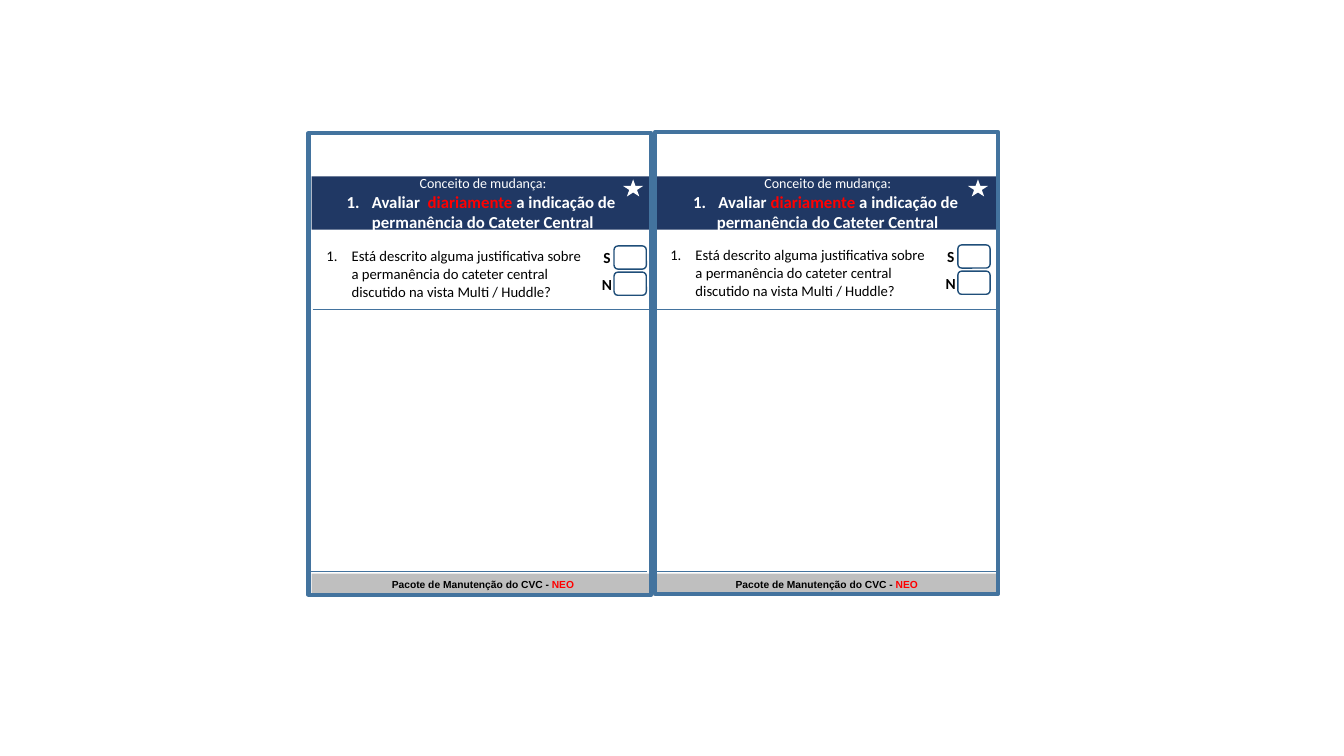
from dataclasses import dataclass

from lxml.etree import SubElement
from pptx import Presentation
from pptx.dml.color import RGBColor
from pptx.enum.shapes import MSO_CONNECTOR, MSO_SHAPE
from pptx.enum.text import MSO_ANCHOR, PP_ALIGN
from pptx.oxml.ns import qn
from pptx.shapes.autoshape import Shape
from pptx.shapes.shapetree import SlideShapes
from pptx.util import Inches, Pt

NAVY = RGBColor(0x20, 0x38, 0x64)
STEEL = RGBColor(0x43, 0x73, 0x9E)
EDGE = RGBColor(0x1F, 0x4E, 0x79)
GREY = RGBColor(0xBF, 0xBF, 0xBF)
WHITE = RGBColor(0xFF, 0xFF, 0xFF)
BLACK = RGBColor(0, 0, 0)
RED = RGBColor(0xFF, 0, 0)

WIDTH = 3.4
HANG = Inches(0.25)


@dataclass(frozen=True)
class Box:
    left: float
    top: float
    width: float
    height: float

    def inches(self) -> tuple[Inches, ...]:
        return tuple(map(Inches, (self.left, self.top, self.width, self.height)))


@dataclass(frozen=True)
class Style:
    size: float
    color: RGBColor
    bold: bool = False
    name: str = "Calibri"


@dataclass(frozen=True)
class Line:
    runs: tuple[tuple[str, Style], ...]
    align: PP_ALIGN = PP_ALIGN.CENTER
    listed: bool = False


@dataclass(frozen=True)
class Card:
    left: float
    band: float
    frame: float
    base: float
    lift: float
    lead: tuple[str, str, str]


FOOT = Style(7.3, BLACK, True, "Arial")
FOOT_RED = Style(7.3, RED, True, "Arial")
SMALL = Style(10, WHITE)
HEAD = Style(12, WHITE, True)
HEAD_RED = Style(12, RED, True)
BODY = Style(10.5, BLACK)
MARK = Style(11, BLACK, True)

CARDS = (
    Card(3.09, 3.09, 3.06, 3.04, 0, ("Avaliar  ", "diariamente", " a indicação de ")),
    Card(6.5, 6.51, 6.5, 6.5, 0.01, ("Avaliar ", "diariamente ", "a indicação de ")),
)
CHOICES = (("S", 2.44, 2.47, 0.17), ("N", 2.7, 2.75, 0.14))
QUESTION = (
    "Está descrito alguma justificativa sobre a permanência do cateter central "
    "discutido na vista Multi / Huddle?"
)


def write(shape: Shape, lines: list[Line], inset: float = 0, wrap: bool = True) -> None:
    frame = shape.text_frame
    pad = Inches(inset)
    form = {
        "word_wrap": wrap,
        "vertical_anchor": MSO_ANCHOR.MIDDLE,
        "margin_left": pad,
        "margin_right": pad,
        "margin_top": 0,
        "margin_bottom": 0,
    }
    for key, value in form.items():
        setattr(frame, key, value)
    for spot, line in enumerate(lines):
        para = frame.add_paragraph() if spot else frame.paragraphs[0]
        para.alignment = line.align
        if line.listed:
            props = para._p.get_or_add_pPr()
            props.set("marL", str(HANG))
            props.set("indent", str(-HANG))
            SubElement(props, qn("a:buFont"), typeface="+mj-lt")
            SubElement(props, qn("a:buAutoNum"), type="arabicPeriod")
        for text, style in line.runs:
            run = para.add_run()
            run.text = text
            font = {"size": Pt(style.size), "bold": style.bold, "name": style.name}
            for key, value in font.items():
                setattr(run.font, key, value)
            run.font.color.rgb = style.color


def fill(shapes: SlideShapes, kind: MSO_SHAPE, box: Box, color: RGBColor) -> Shape:
    shape = shapes.add_shape(kind, *box.inches())
    shape.shadow.inherit = False
    shape.fill.solid()
    shape.fill.fore_color.rgb = color
    shape.line.fill.background()
    return shape


def outline(shapes: SlideShapes, kind: MSO_SHAPE, box: Box, color: RGBColor, width: float) -> None:
    shape = shapes.add_shape(kind, *box.inches())
    shape.shadow.inherit = False
    shape.fill.background()
    shape.line.color.rgb = color
    shape.line.width = Pt(width)


def rule(shapes: SlideShapes, left: float, top: float) -> None:
    ends = map(Inches, (left, top, left + 3.38, top))
    line = shapes.add_connector(MSO_CONNECTOR.STRAIGHT, *ends)
    line.line.color.rgb = STEEL
    line.line.width = Pt(1)
    SubElement(line._element.spPr, qn("a:effectLst"))


def draw(shapes: SlideShapes, card: Card) -> None:
    left, lift = card.left, card.lift
    foot = fill(shapes, MSO_SHAPE.RECTANGLE, Box(left, 5.69, WIDTH, 0.22), GREY)
    write(foot, [Line((("Pacote de Manutenção do CVC - ", FOOT), ("NEO", FOOT_RED)))])

    band = fill(shapes, MSO_SHAPE.RECTANGLE, Box(card.band, 1.75, WIDTH, 0.53), NAVY)
    lead = tuple(zip(card.lead, (HEAD, HEAD_RED, HEAD)))
    write(band, [
        Line((("Conceito de mudança:", SMALL),)),
        Line(lead, listed=True),
        Line((("permanência do Cateter Central", HEAD),)),
    ])

    ask = shapes.add_textbox(*Box(left + 0.05, 2.46 - lift, 2.8, 0.51).inches())
    write(ask, [Line(((QUESTION, BODY),), PP_ALIGN.LEFT, True)], 0.1)

    for text, top, mid, height in CHOICES:
        tick = Box(left + 3, top - lift, 0.32, 0.23)
        outline(shapes, MSO_SHAPE.ROUNDED_RECTANGLE, tick, EDGE, 1)
        label = shapes.add_textbox(*Box(left + 2.81, mid - lift, 0.24, height).inches())
        write(label, [Line(((text, MARK),))], wrap=False)

    frame = Box(card.frame, 1.32 - lift, WIDTH, 4.58)
    outline(shapes, MSO_SHAPE.RECTANGLE, frame, STEEL, 3)
    rule(shapes, left + 0.01, 3.07)
    fill(shapes, MSO_SHAPE.STAR_5_POINT, Box(card.band + 3.09, 1.78, 0.2, 0.17), WHITE)
    rule(shapes, card.base, 5.67)


def main() -> None:
    deck = Presentation()
    deck.slide_width, deck.slide_height = Inches(13.33), Inches(7.5)
    slide = deck.slides.add_slide(deck.slide_layouts[6])
    for card in CARDS:
        draw(slide.shapes, card)
    deck.save("out.pptx")


if __name__ == "__main__":
    main()
